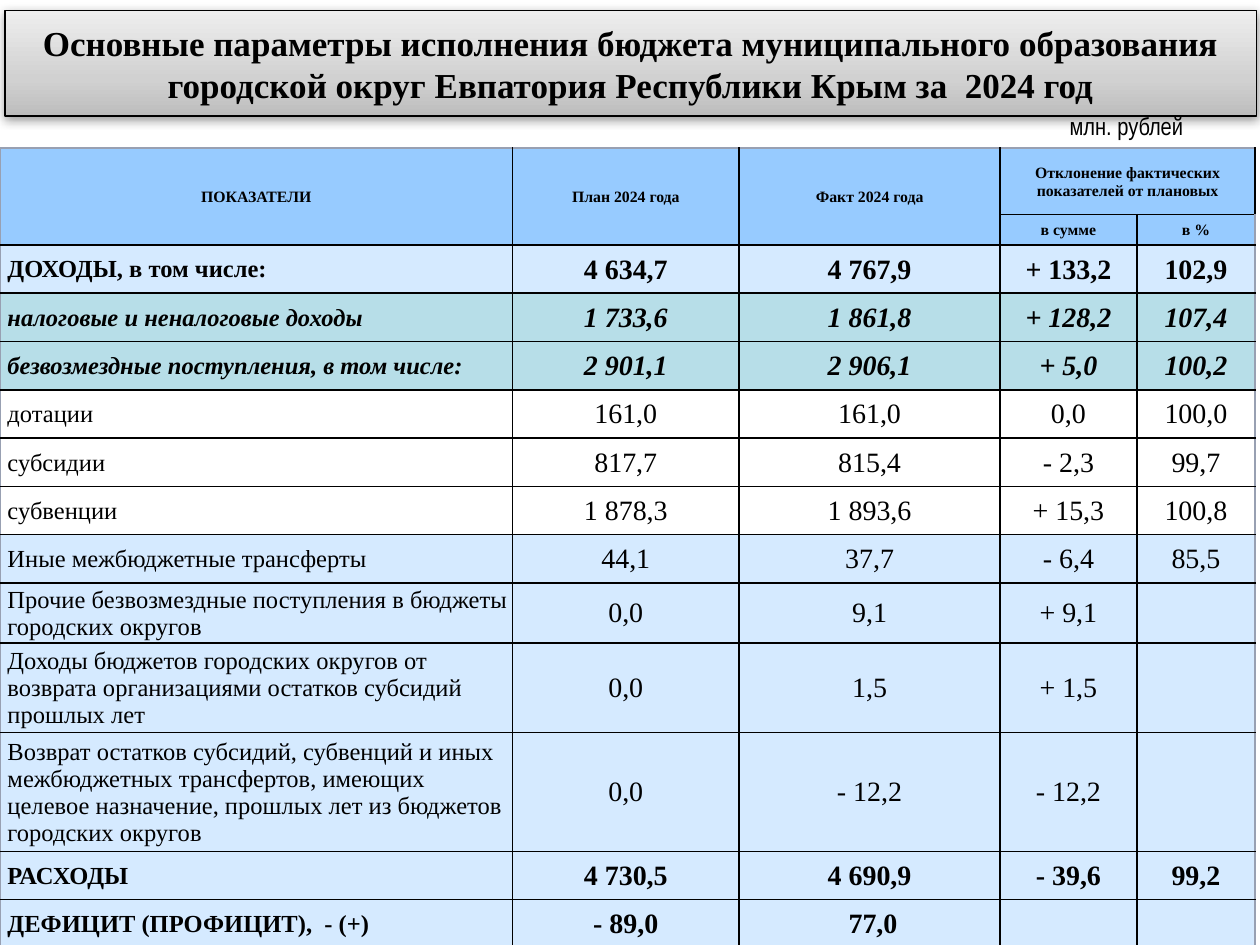
import pptx
import pptx.dml.color
import pptx.enum.text
import pptx.oxml
import pptx.oxml.ns
import pptx.util

Pt = pptx.util.Pt
RGBColor = pptx.dml.color.RGBColor
ALIGN = pptx.enum.text.PP_ALIGN
MIDDLE = pptx.enum.text.MSO_ANCHOR.MIDDLE

BLACK = RGBColor(0x00, 0x00, 0x00)
WHITE = RGBColor(0xFF, 0xFF, 0xFF)
HEADER_BLUE = RGBColor(0x97, 0xCB, 0xFF)
PALE_BLUE = RGBColor(0xD5, 0xEA, 0xFF)
TEAL = RGBColor(0xB7, 0xDE, 0xE8)
EDGE_GREY = RGBColor(0x98, 0xA0, 0xB2)
SERIF = "Times New Roman"

# Content
TITLE = ("Основные параметры исполнения бюджета муниципального образования "
         "городской округ Евпатория Республики Крым за  2024 год")
UNIT = "млн. рублей"
HEADERS = [
    ["ПОКАЗАТЕЛИ", "План 2024 года", "Факт 2024 года",
     "Отклонение фактических показателей от плановых", ""],
    ["", "", "", "в сумме", "в %"],
]
# Each group: fill, bold, italic, rows
GROUPS = [
    (PALE_BLUE, True, False, [
        ["ДОХОДЫ, в том числе:", "4 634,7", "4 767,9", "+ 133,2", "102,9"]]),
    (TEAL, True, True, [
        ["налоговые и неналоговые доходы", "1 733,6", "1 861,8", "+ 128,2", "107,4"],
        ["безвозмездные поступления, в том числе:", "2 901,1", "2 906,1", "+ 5,0", "100,2"]]),
    (WHITE, False, False, [
        ["дотации", "161,0", "161,0", "0,0", "100,0"],
        ["субсидии", "817,7", "815,4", "- 2,3", "99,7"],
        ["субвенции", "1 878,3", "1 893,6", "+ 15,3", "100,8"]]),
    (PALE_BLUE, False, False, [
        ["Иные межбюджетные трансферты", "44,1", "37,7", "- 6,4", "85,5"],
        ["Прочие безвозмездные поступления в бюджеты городских округов",
         "0,0", "9,1", "+ 9,1", ""],
        ["Доходы бюджетов городских округов от возврата организациями "
         "остатков субсидий прошлых лет", "0,0", "1,5", "+ 1,5", ""],
        ["Возврат остатков субсидий, субвенций и иных межбюджетных трансфертов, "
         "имеющих целевое назначение, прошлых лет из бюджетов городских округов",
         "0,0", "- 12,2", "- 12,2", ""]]),
    (PALE_BLUE, True, False, [
        ["РАСХОДЫ", "4 730,5", "4 690,9", "- 39,6", "99,2"],
        ["ДЕФИЦИТ (ПРОФИЦИТ),  - (+)", "- 89,0", " 77,0", "", ""]]),
]
COLUMN_WIDTHS = [292.8, 129.6, 149, 78.3, 67.5]
ROW_HEIGHT = 27.6
SPECIAL_HEIGHTS = {0: 38, 1: 17.3, 10: 49, 11: 63.4}


def write(frame, text, size, font=SERIF, bold=False, italic=False, align=ALIGN.CENTER):
    para = frame.paragraphs[0]
    para.alignment = align
    if text:
        span = para.add_run()
        span.text = text
        span.font.name = font
        span.font.size = Pt(size)
        span.font.bold = bold
        span.font.italic = italic
        span.font.color.rgb = BLACK


def add_xml(parent, xml):
    namespace = pptx.oxml.ns.nsdecls("a")
    parent.append(pptx.oxml.parse_xml(xml.replace(" NS", " " + namespace, 1)))


def add_border(cell, side, color, width):
    add_xml(cell._tc.get_or_add_tcPr(),
            f'<a:ln{side} NS w="{Pt(width)}"><a:solidFill><a:srgbClr val="{color}"/>'
            f'</a:solidFill></a:ln{side}>')


deck = pptx.Presentation()
deck.slide_width, deck.slide_height = Pt(720), Pt(540)
page = deck.slides.add_slide(deck.slide_layouts[5])

# Title banner
banner = page.shapes.title
banner.left, banner.top, banner.width, banner.height = Pt(2.9), Pt(5.8), Pt(715), Pt(60.5)
banner.text_frame.word_wrap = True
banner.text_frame.auto_size = pptx.enum.text.MSO_AUTO_SIZE.NONE
banner.text_frame.vertical_anchor = MIDDLE
write(banner.text_frame, TITLE, 20, bold=True)
stops = "".join(f'<a:gs pos="{place * 1000}"><a:srgbClr val="{color}"/></a:gs>'
                for place, color in [(0, "BDBDBD"), (35, "D1D1D1"), (100, "EEEEEE")])
properties = banner._element.spPr
add_xml(properties, '<a:prstGeom NS prst="rect"><a:avLst/></a:prstGeom>')
add_xml(properties, f'<a:gradFill NS rotWithShape="1"><a:gsLst>{stops}</a:gsLst>'
                    '<a:lin ang="16200000" scaled="0"/></a:gradFill>')
banner.line.color.rgb = BLACK
banner.line.width = Pt(0.75)
add_xml(properties, f'<a:effectLst NS><a:outerShdw blurRad="{Pt(6)}" dist="{Pt(1.5)}" '
                    'dir="5400000" rotWithShape="0"><a:srgbClr val="000000">'
                    '<a:alpha val="38000"/></a:srgbClr></a:outerShdw></a:effectLst>')

# Unit label
label = page.shapes.add_textbox(Pt(586.8), Pt(60.5), Pt(96.5), Pt(22.3))
label.text_frame.word_wrap = True
label.text_frame.vertical_anchor = MIDDLE
write(label.text_frame, UNIT, 14, font="Arial Narrow", align=ALIGN.RIGHT)

# Budget table
rows = [(HEADER_BLUE, True, False, texts) for texts in HEADERS]
rows += [(fill, bold, italic, texts)
         for fill, bold, italic, group in GROUPS for texts in group]
heights = [SPECIAL_HEIGHTS.get(index, ROW_HEIGHT) for index in range(len(rows))]
last_column = len(COLUMN_WIDTHS) - 1
table = page.shapes.add_table(len(rows), len(COLUMN_WIDTHS), Pt(0), Pt(84.7),
                              Pt(sum(COLUMN_WIDTHS)), Pt(sum(heights))).table
table.first_row = table.horz_banding = False
for column, width in zip(table.columns, COLUMN_WIDTHS):
    column.width = Pt(width)
for row, height in zip(table.rows, heights):
    row.height = Pt(height)

for row_index, (fill, bold, italic, texts) in enumerate(rows):
    is_header = row_index < len(HEADERS)
    for column_index, text in enumerate(texts):
        cell = table.cell(row_index, column_index)
        is_name = column_index == 0 and not is_header
        cell.vertical_anchor = MIDDLE
        cell.margin_left = Pt(4.3 if is_name else 0.7)
        cell.margin_right = cell.margin_top = Pt(0.7)
        cell.margin_bottom = Pt(0)
        write(cell.text_frame, text, 9 if is_header else 14 if is_name else 16,
              bold=bold, italic=italic, align=ALIGN.LEFT if is_name else ALIGN.CENTER)
        outer = {"L": column_index == 0, "R": column_index == last_column,
                 "T": row_index == 0, "B": False}
        for side, is_outer in outer.items():
            add_border(cell, side, *((EDGE_GREY, 1.5) if is_outer else (BLACK, 1)))
        cell.fill.solid()
        cell.fill.fore_color.rgb = fill

# Merged headings
for column_index in range(3):
    table.cell(0, column_index).merge(table.cell(1, column_index))
table.cell(0, 3).merge(table.cell(0, last_column))

deck.save("out.pptx")
